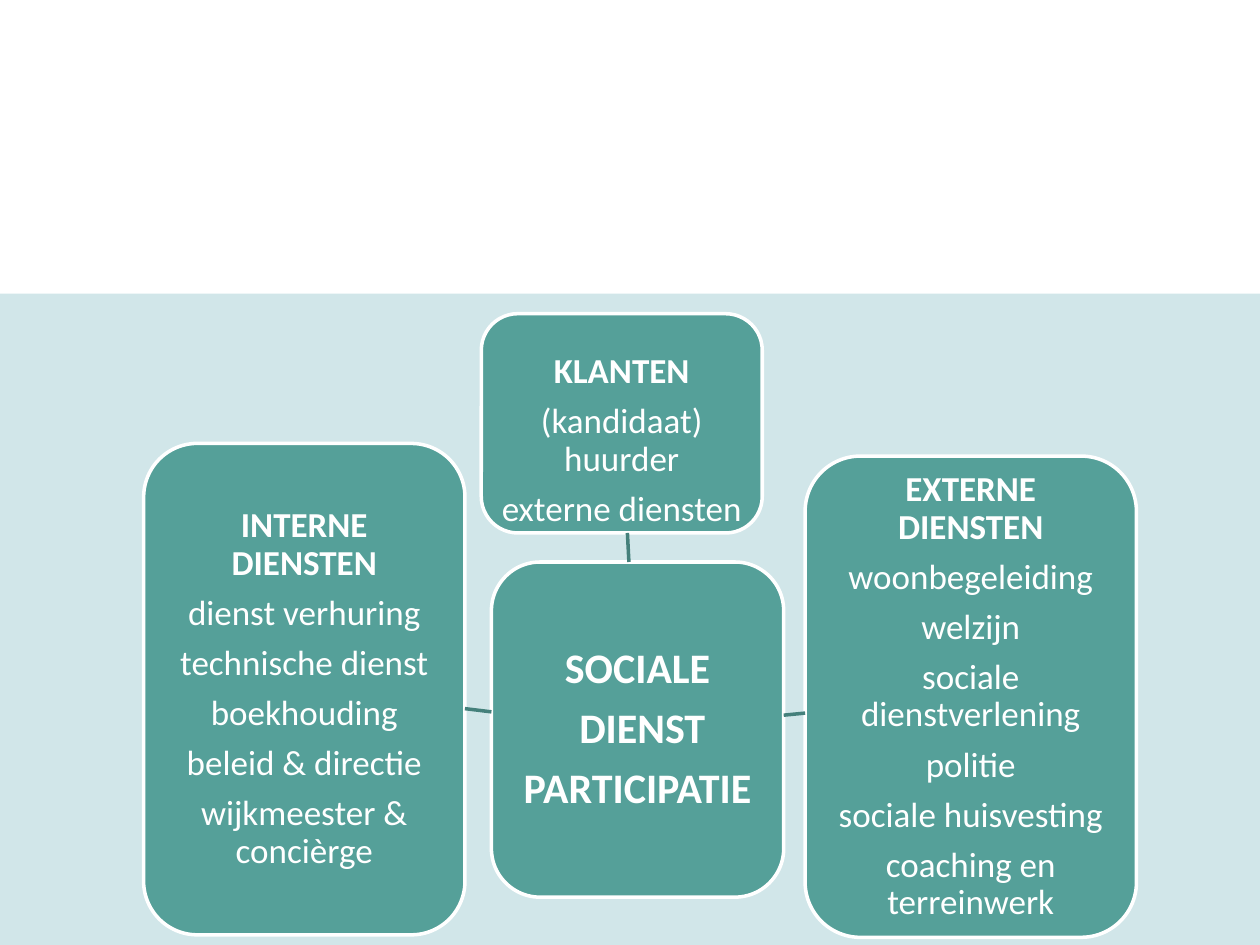
from lxml.etree import SubElement
from pptx import Presentation
from pptx.dml.color import RGBColor
from pptx.enum.shapes import MSO_CONNECTOR as Connector, MSO_SHAPE as Shape
from pptx.enum.text import MSO_ANCHOR as Anchor, PP_ALIGN as Align
from pptx.oxml.ns import qn
from pptx.util import Inches, Pt

COLORS = {"band": "D1E6E9", "box": "55A099", "link": "44807B", "white": "FFFFFF"}
FONT = "Calibri"
WIDTH, HEIGHT = Inches(10), Inches(7.5)
BAND = (0, 31.07, 100, 68.93)

CENTER = {
    "area": (39, 59.47, 23.2, 35.47),
    "lines": ["SOCIALE", " DIENST", "PARTICIPATIE"],
    "format": {"size": 24, "bold_lines": 3, "inset": 0.07},
}
PARTNERS = [
    {
        "area": (38.2, 33.2, 22.3, 23.2),
        "lines": ["KLANTEN", "(kandidaat) huurder", "externe diensten"],
        "format": {"anchor": Anchor.TOP, "top": 0.23},
    },
    {
        "area": (63.9, 48.27, 26.3, 50.93),
        "lines": ["EXTERNE DIENSTEN", "woonbegeleiding", "welzijn",
                  "sociale dienstverlening", "politie", "sociale huisvesting",
                  "coaching en terreinwerk"],
        "format": {},
    },
    {
        "area": (11.4, 46.93, 25.5, 52),
        "lines": ["INTERNE DIENSTEN", "dienst verhuring", "technische dienst",
                  "boekhouding", "beleid & directie", "wijkmeester & concièrge"],
        "format": {},
    },
]


def color(name):
    return RGBColor.from_string(COLORS[name])


def add_block(slide, kind, area, fill):
    left, top, width, height = area
    shape = slide.shapes.add_shape(
        kind, int(WIDTH * left / 100), int(HEIGHT * top / 100),
        int(WIDTH * width / 100), int(HEIGHT * height / 100))
    shape.shadow.inherit = False
    shape.fill.solid()
    shape.fill.fore_color.rgb = color(fill)
    shape.line.fill.background()
    return shape


def write_text(shape, lines, size=20, bold_lines=1, inset=0.06, top=None,
               anchor=Anchor.MIDDLE):
    frame = shape.text_frame
    frame.word_wrap = True
    frame.vertical_anchor = anchor
    frame.margin_left = frame.margin_right = frame.margin_bottom = Inches(inset)
    frame.margin_top = Inches(inset if top is None else top)
    for index, line in enumerate(lines):
        paragraph = frame.add_paragraph() if index else frame.paragraphs[0]
        paragraph.text = line
        paragraph.alignment = Align.CENTER
        paragraph.line_spacing = 0.9
        paragraph.space_after = Pt(size * 0.35)
        paragraph.font.name = FONT
        paragraph.font.size = Pt(size)
        paragraph.font.bold = index < bold_lines
        paragraph.font.color.rgb = color("white")


def add_box(slide, box):
    shape = add_block(slide, Shape.ROUNDED_RECTANGLE, box["area"], "box")
    shape.line.color.rgb = color("white")
    shape.line.width = Pt(2)
    write_text(shape, box["lines"], **box["format"])
    return shape


def middle(shape):
    return shape.left + shape.width / 2, shape.top + shape.height / 2


def edge_point(shape, other):
    (x, y), (other_x, other_y) = middle(shape), middle(other)
    dx, dy = other_x - x, other_y - y
    share = 1 / max(abs(dx) * 2 / shape.width, abs(dy) * 2 / shape.height)
    return round(x + dx * share), round(y + dy * share)


def link(slide, start, end):
    connector = slide.shapes.add_connector(
        Connector.STRAIGHT, *edge_point(start, end), *edge_point(end, start))
    connector.line.color.rgb = color("link")
    connector.line.width = Pt(2)
    SubElement(connector.element.spPr, qn("a:effectLst"))


def main():
    presentation = Presentation()
    presentation.slide_width, presentation.slide_height = WIDTH, HEIGHT
    slide = presentation.slides.add_slide(presentation.slide_layouts[6])
    add_block(slide, Shape.RECTANGLE, BAND, "band")
    center = add_box(slide, CENTER)
    for partner in PARTNERS:
        link(slide, center, add_box(slide, partner))
    presentation.save("out.pptx")


if __name__ == "__main__":
    main()
